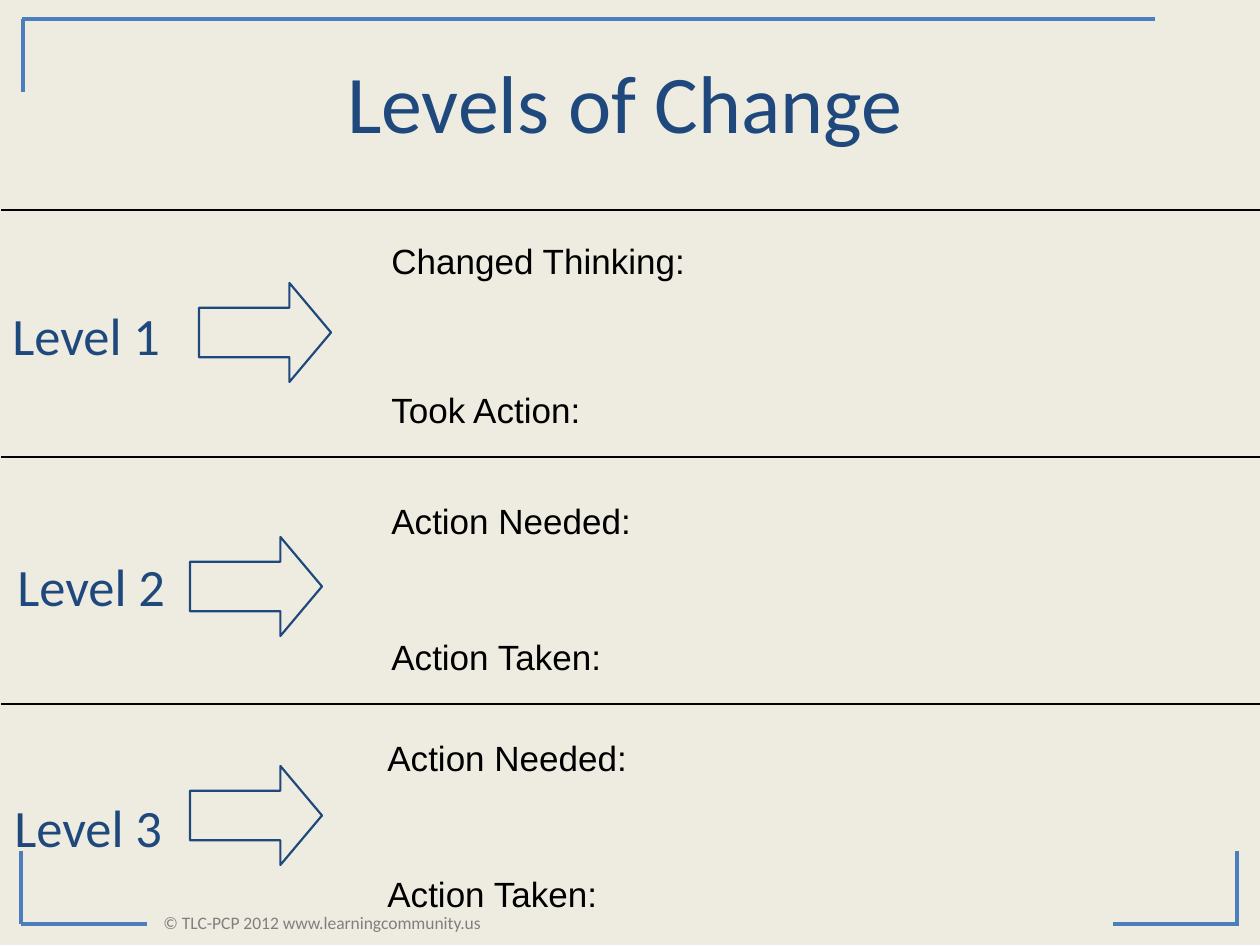
"""Builds the Levels of Change worksheet slide."""
from pptx import Presentation
from pptx import util as u
from pptx.dml.color import RGBColor
from pptx.enum import shapes, text
from pptx.oxml.ns import qn
from lxml import etree

NAVY, BLUE, BLACK, GREY, CREAM = "1F497D", "4B7EBC", "000000", "7F7F7F", "EEECE1"


def px(length):
    """Turn pixels at 126 to the inch into EMU."""
    return u.Emu(round(length * 914400 / 126))


def color(value):
    """Turn a hex string into a colour."""
    return RGBColor.from_string(value)


class Sheet:
    """Holds the current slide and its style."""

    heading_font = "Calibri"
    body_font = "Arial"

    def __init__(self, deck):
        """Add a blank slide with the cream background."""
        self.slide = deck.slides.add_slide(deck.slide_layouts[6])
        self.slide.background.fill.solid()
        self.slide.background.fill.fore_color.rgb = color(CREAM)

    def line(self, x1, y1, x2, y2, ink, points):
        """Draw a straight line."""
        line = self.slide.shapes.add_connector(
            shapes.MSO_CONNECTOR.STRAIGHT, px(x1), px(y1), px(x2), px(y2))
        line.line.color.rgb = color(ink)
        line.line.width = u.Pt(points)
        etree.SubElement(line._element.spPr, qn("a:effectLst"))

    def arrow(self, left, top):
        """Draw an outlined arrow pointing right."""
        arrow = self.slide.shapes.add_shape(
            shapes.MSO_SHAPE.RIGHT_ARROW, px(left), px(top), px(132), px(99))
        arrow.adjustments[0] = 0.5
        arrow.adjustments[1] = 0.42
        arrow.shadow.inherit = False
        arrow.fill.background()
        arrow.line.color.rgb = color(NAVY)
        arrow.line.width = u.Pt(1.25)

    def text(self, area, lines, size, font, ink, align=text.PP_ALIGN.LEFT,
             anchor=text.MSO_ANCHOR.TOP, wrap=True, inset=6, gap=0, spacing=None):
        """Write paragraphs in a box, set apart by a gap in points."""
        box = self.slide.shapes.add_textbox(*map(px, area))
        frame = box.text_frame
        frame.word_wrap = wrap
        frame.vertical_anchor = anchor
        frame.margin_top = px(inset)
        if not wrap:
            frame.auto_size = text.MSO_AUTO_SIZE.SHAPE_TO_FIT_TEXT
        for index, line in enumerate(lines):
            para = frame.add_paragraph() if index else frame.paragraphs[0]
            para.alignment = align
            para.line_spacing = spacing
            if index:
                para.space_before = u.Pt(gap)
            span = para.add_run()
            span.text = line
            span.font.size = u.Pt(size)
            span.font.name = font
            span.font.color.rgb = color(ink)

    def title(self, area, words):
        """Write the centred slide title."""
        self.text(area, [words], 46.8, self.heading_font, NAVY,
                  align=text.PP_ALIGN.CENTER, inset=9)

    def label(self, left, top, words):
        """Write the name of a level."""
        self.text((left, top, 178, 76), [words], 30, self.heading_font, NAVY, wrap=False)

    def prompts(self, area, lines, gap, spacing):
        """Write the two prompts of a level."""
        self.text(area, lines, 20, self.body_font, BLACK, inset=9, gap=gap, spacing=spacing)

    def footer(self, area, words):
        """Write the copyright line."""
        self.text(area, [words], 10, self.heading_font, GREY,
                  align=text.PP_ALIGN.CENTER, anchor=text.MSO_ANCHOR.MIDDLE)


def main():
    """Build and save the deck."""
    deck = Presentation()
    deck.slide_width, deck.slide_height = px(1260), px(945)
    sheet = Sheet(deck)

    corners = [(22, 19, 1155, 19), (23, 19, 23, 92), (21, 851, 21, 924),
               (21, 924, 147, 924), (1237, 851, 1237, 924), (1113, 924, 1239, 924)]
    for ends in corners:
        sheet.line(*ends, BLUE, 2)
    sheet.footer((-53, 898, 750, 49), "© TLC-PCP 2012 www.learningcommunity.us")
    sheet.title((33, 43, 1184, 157), "Levels of Change")

    needed = ["Action Needed:", "Action Taken:"]
    levels = [
        ((0, 297), (199, 283), (379, 231, 809, 227),
         ["Changed Thinking:", "Took Action:"], 61, 1.0),
        ((5, 548), (190, 537), (379, 495, 842, 190), needed, 56, 0.9),
        ((2, 789), (190, 766), (375, 732, 854, 190), needed, 56, 0.9),
    ]
    for index, (label, arrow, area, lines, gap, spacing) in enumerate(levels):
        divider = 210 + 247 * index
        sheet.line(1, divider, 1261, divider, BLACK, 0.75)
        sheet.label(*label, f"Level {index + 1}")
        sheet.arrow(*arrow)
        sheet.prompts(area, lines, gap, spacing)

    deck.save("out.pptx")


if __name__ == "__main__":
    main()
